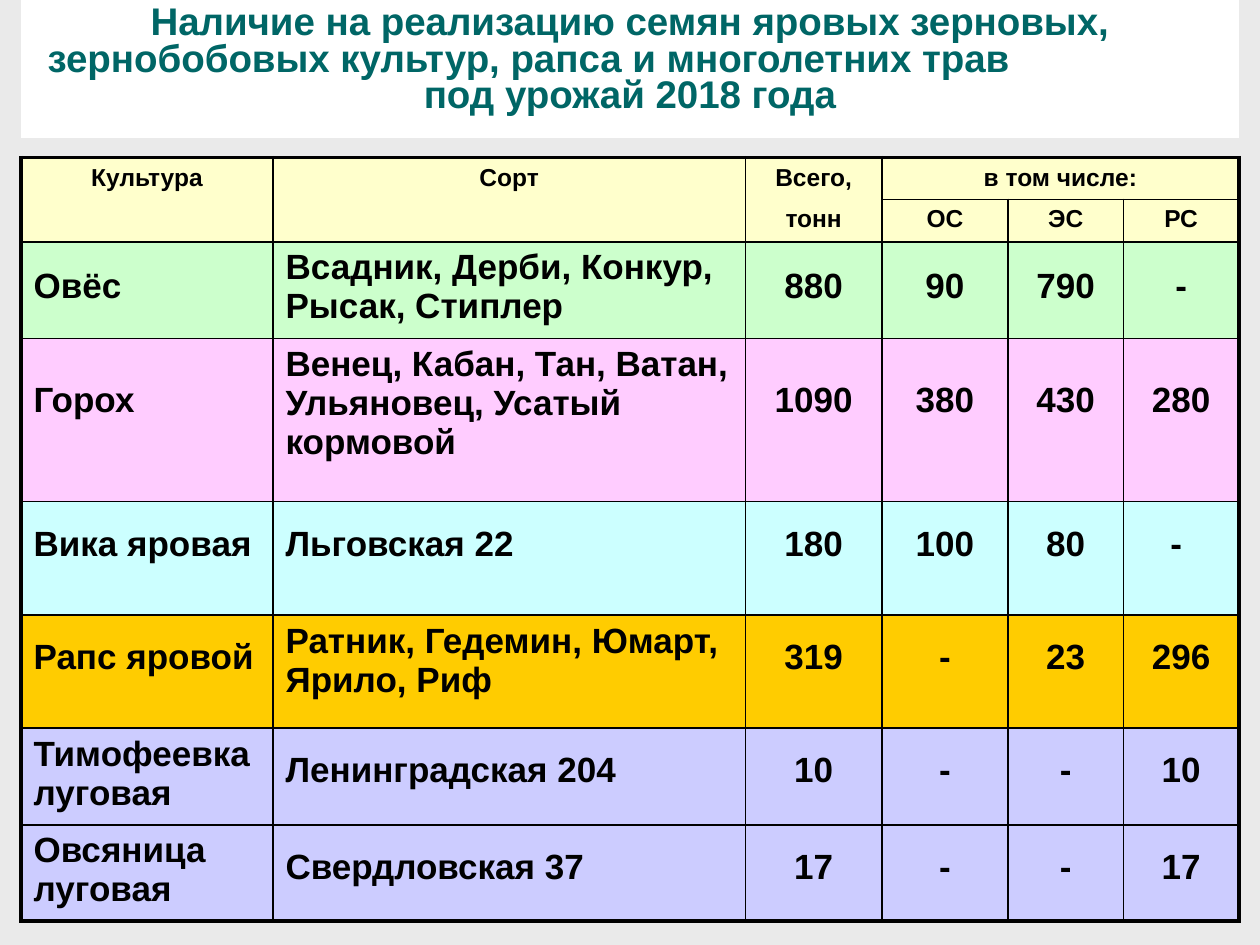
from lxml.etree import SubElement
from pptx import Presentation
from pptx.dml.color import RGBColor
from pptx.enum.text import MSO_ANCHOR, PP_ALIGN
from pptx.oxml.ns import qn
from pptx.util import Pt

COLORS = {
    "background": "EAEAEA", "title": "006666", "white": "FFFFFF", "black": "000000",
    "header": "FFFFCC", "oats": "CCFFCC", "peas": "FFCCFF", "vetch": "CCFFFF",
    "rapeseed": "FFCC00", "grasses": "CCCCFF",
}
TITLE_LINES = [
    ("Наличие на реализацию семян яровых зерновых,", PP_ALIGN.CENTER, 0),
    ("зернобобовых культур, рапса и многолетних трав", PP_ALIGN.LEFT, 8),
    ("под урожай 2018 года", PP_ALIGN.CENTER, 0),
]
HEADER_ROWS = [
    ("Культура", "Сорт", "Всего,", "в том числе:", "", ""),
    ("", "", "тонн", "ОС", "ЭС", "РС"),
]
CROP_ROWS = [
    ("oats", 55.4, 10.8, ("Овёс", "Всадник, Дерби, Конкур, Рысак, Стиплер", "880", "90", "790", "-")),
    ("peas", 93.1, 20.5, ("Горох", "Венец, Кабан, Тан, Ватан, Ульяновец, Усатый кормовой",
                          "1090", "380", "430", "280")),
    ("vetch", 64.8, 9.6, ("Вика яровая", "Льговская 22", "180", "100", "80", "- ")),
    ("rapeseed", 64.6, 9.6, ("Рапс яровой", "Ратник, Гедемин, Юмарт, Ярило, Риф",
                             "319", "-", "23", "296")),
    ("grasses", 55.4, 9.6, ("Тимофеевка луговая", "Ленинградская 204", "10", "-", "-", "10")),
    ("grasses", 55, 9.6, ("Овсяница луговая", "Свердловская 37", "17", "-", "-", "17")),
]
COLUMN_WIDTHS = [144, 270, 78, 72, 66, 66]
HEADER_HEIGHT = 23.9
LEFT, TABLE_TOP, TITLE_HEIGHT = 12, 90, 78.8
WIDTH = sum(COLUMN_WIDTHS)
ONE_LINE_LENGTH = {0: 11, 1: 17}
THIN, THICK = 1, 2.25


def color(name):
    return RGBColor.from_string(COLORS[name])


def write(paragraph, text, size=20, ink="black", align=PP_ALIGN.LEFT, spacing=None, indent=0):
    paragraph.alignment = align
    paragraph.space_before = Pt(0)
    if spacing:
        paragraph.line_spacing = spacing
    if indent:
        paragraph._p.get_or_add_pPr().set("marL", str(Pt(indent)))
    run = paragraph.add_run()
    run.text = text
    run.font.name = "Arial"
    run.font.size = Pt(size)
    run.font.bold = True
    run.font.color.rgb = color(ink)


def set_borders(cell, widths):
    properties = cell._tc.get_or_add_tcPr()
    for side, width in zip("LRTB", widths):
        line = SubElement(properties, qn(f"a:ln{side}"), w=str(Pt(width)))
        if width:
            fill = SubElement(line, qn("a:solidFill"))
            SubElement(fill, qn("a:srgbClr"), val=COLORS["black"])
        else:
            SubElement(line, qn("a:noFill"))


def style_cell(cell, fill, widths, top=3.6):
    set_borders(cell, widths)
    cell.fill.solid()
    cell.fill.fore_color.rgb = color(fill)
    cell.vertical_anchor = MSO_ANCHOR.TOP
    cell.margin_top = Pt(top)


def add_table(slide, top, widths, heights):
    table = slide.shapes.add_table(
        len(heights), len(widths), Pt(LEFT), Pt(top), Pt(sum(widths)), Pt(sum(heights))).table
    table.first_row = table.horz_banding = False
    for column, width in zip(table.columns, widths):
        column.width = Pt(width)
    for row, height in zip(table.rows, heights):
        row.height = Pt(height)
    return table


def add_title_table(slide):
    cell = add_table(slide, 0, [WIDTH], [TITLE_HEIGHT]).cell(0, 0)
    style_cell(cell, "white", (0, 0, 0, 0))
    frame = cell.text_frame
    for index, (text, align, indent) in enumerate(TITLE_LINES):
        paragraph = frame.add_paragraph() if index else frame.paragraphs[0]
        write(paragraph, text, size=22, ink="title", align=align, spacing=0.85, indent=indent)


def add_crop_table(slide):
    rows = [("header", HEADER_HEIGHT, 0, texts) for texts in HEADER_ROWS] + CROP_ROWS
    table = add_table(slide, TABLE_TOP, COLUMN_WIDTHS, [row[1] for row in rows])
    table.cell(0, 3).merge(table.cell(0, 5))
    last_row, last_column = len(rows) - 1, len(COLUMN_WIDTHS) - 1

    for row, (fill, _, drop, texts) in enumerate(rows):
        is_header = fill == "header"
        for column, text in enumerate(texts):
            cell = table.cell(row, column)
            end = column + cell.span_width - 1 if cell.is_merge_origin else column
            open_header = column < 3
            wraps = len(text) > ONE_LINE_LENGTH.get(column, len(text))
            style_cell(cell, fill, (
                0 if cell.is_spanned else THIN if column else THICK,
                THICK if end == last_column else 0 if cell.is_spanned else THIN,
                THICK if row == 0 else 0 if row == 1 and open_header else THIN,
                THICK if row == last_row else 0 if row == 0 and open_header else THIN,
            ), top=3.6 if wraps else 3.6 + drop)
            paragraph = cell.text_frame.paragraphs[0]
            if text:
                centered = is_header or column > 1
                write(paragraph, text, size=14 if is_header else 20,
                      align=PP_ALIGN.CENTER if centered else PP_ALIGN.LEFT)
            else:
                paragraph.font.size = Pt(14)


def main():
    presentation = Presentation()
    presentation.slide_width, presentation.slide_height = Pt(720), Pt(540)
    slide = presentation.slides.add_slide(presentation.slide_layouts[6])
    slide.background.fill.solid()
    slide.background.fill.fore_color.rgb = color("background")
    add_title_table(slide)
    add_crop_table(slide)
    presentation.save("out.pptx")


if __name__ == "__main__":
    main()
